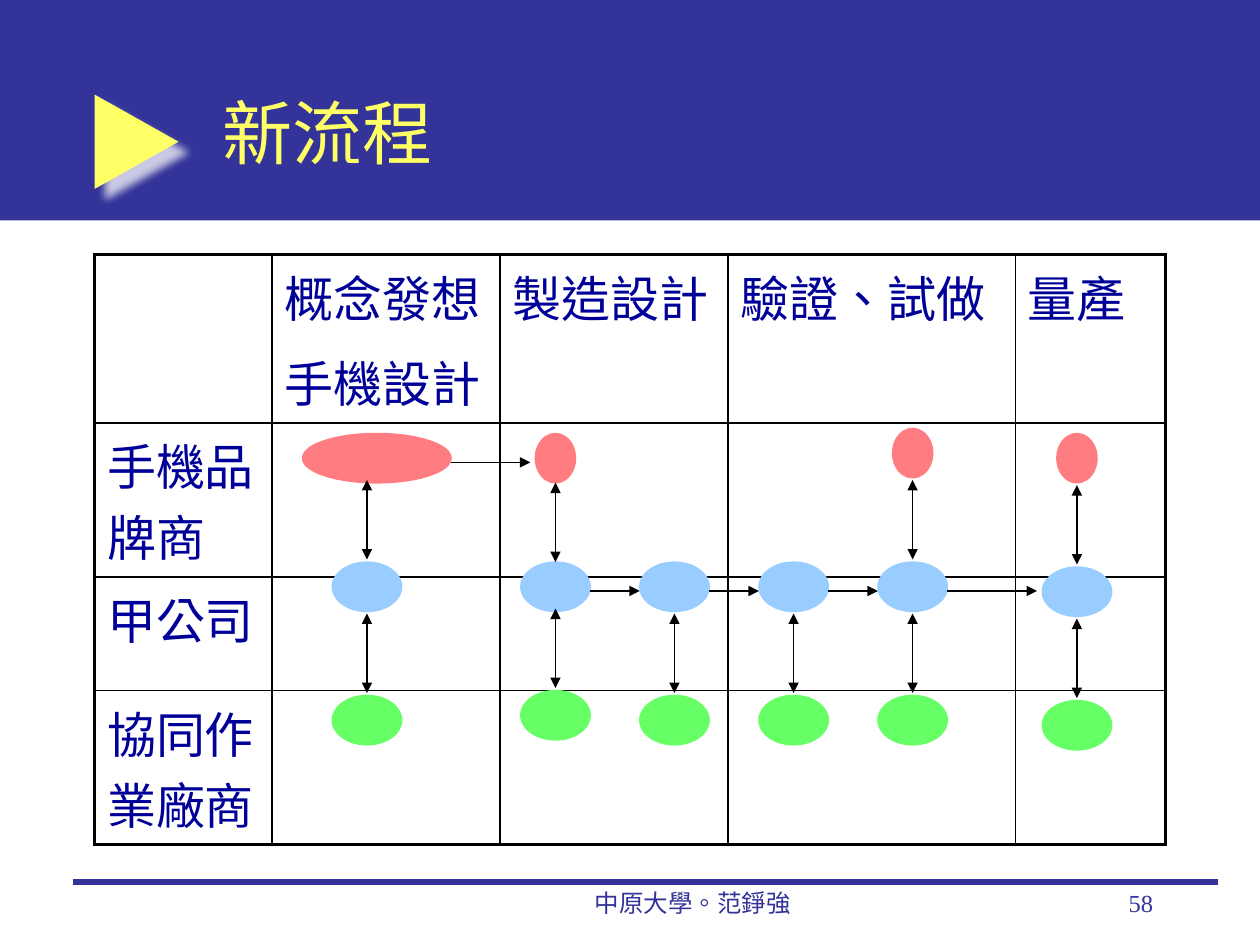
from lxml import etree
from pptx import Presentation
from pptx.dml.color import RGBColor
from pptx.enum.lang import MSO_LANGUAGE_ID
from pptx.enum.shapes import MSO_CONNECTOR, MSO_SHAPE
from pptx.enum.text import MSO_ANCHOR, PP_ALIGN
from pptx.oxml import parse_xml
from pptx.oxml.ns import qn
from pptx.util import Pt

RECT, OVAL, ARROW = MSO_SHAPE.RECTANGLE, MSO_SHAPE.OVAL, MSO_SHAPE.RIGHT_ARROW
STRAIGHT = MSO_CONNECTOR.STRAIGHT
LEFT, CENTER, RIGHT = PP_ALIGN.LEFT, PP_ALIGN.CENTER, PP_ALIGN.RIGHT
MIDDLE = MSO_ANCHOR.MIDDLE
CHINESE = MSO_LANGUAGE_ID.TRADITIONAL_CHINESE
NS = "http://schemas.openxmlformats.org/drawingml/2006/main"

COLORS = {
    "navy": "333399", "yellow": "FFFF66", "text": "000099", "black": "000000",
    "brand": "FF7C80", "company": "99CCFF", "partner": "66FF66",
}
ROWS = [
    ["", "概念發想\n手機設計", "製造設計", "驗證、試做", "量產"],
    ["手機品牌商", "", "", "", ""],
    ["甲公司", "", "", "", ""],
    ["協同作業廠商", "", "", "", ""],
]
COL_WIDTHS = [101.5, 130.3, 130.3, 164.2, 85.7]
ROW_HEIGHTS = [96.3, 88, 64.8, 88]
NODE_W, NODE_H, SMALL_W, WIDE_W = 39.7, 28.3, 23, 85
LINK_LEN, FLOW_Y = 45.4, 337.7
# STAGES: centre x, company top, partner top, brand top, brand link top, partner link top
STAGES = [
    (209.7, 321.2, 397.4, None, 274.3, 350.6),
    (317.4, 321.2, 394.6, 247.7, 275.8, 347.8),
    (385.4, 321.2, 397.4, None, None, 350.6),
    (453.5, 321.2, 397.4, None, None, 350.6),
    (521.5, 321.2, 397.4, 244.8, 274.3, 350.6),
    (615.4, 324.0, 400.3, 247.7, 277.2, 353.5),
]


def rgb(name):
    """Return the named colour."""
    return RGBColor.from_string(COLORS[name])


def style(p, size, color, font, align=LEFT):
    """Format a whole paragraph."""
    p.alignment = align
    p.font.size, p.font.name = Pt(size), font
    p.font.color.rgb = rgb(color)
    for r in p.runs:
        r.font.language_id = CHINESE


def add_shape(s, kind, x, y, w, h, color, outlined=False):
    """Add a filled preset shape."""
    sp = s.shapes.add_shape(kind, Pt(x), Pt(y), Pt(w), Pt(h))
    sp.shadow.inherit = False
    sp.fill.solid()
    sp.fill.fore_color.rgb = rgb(color)
    if outlined:
        sp.line.color.rgb = rgb(color)
        sp.line.width = Pt(0.75)
    else:
        sp.line.fill.background()
    return sp


def add_node(s, cx, top, color, width=NODE_W):
    """Add an ellipse centred on cx."""
    add_shape(s, OVAL, cx - width / 2, top, width, NODE_H, color, True)


def add_line(s, x1, y1, x2, y2, color="black", width=0.75, ends=()):
    """Add a straight line with optional arrowheads."""
    cn = s.shapes.add_connector(STRAIGHT, Pt(x1), Pt(y1), Pt(x2), Pt(y2))
    cn.line.color.rgb = rgb(color)
    cn.line.width = Pt(width)
    ln = cn.line._get_or_add_ln()
    for end in ends:
        etree.SubElement(ln, qn(f"a:{end}"), type="triangle")
    etree.SubElement(cn._element.spPr, qn("a:effectLst"))


def add_label(s, text, x, w, align):
    """Add a footer text."""
    sp = s.shapes.add_textbox(Pt(x), Pt(504), Pt(w), Pt(36))
    tf = sp.text_frame
    tf.word_wrap = True
    tf.text = text
    style(tf.paragraphs[0], 14, "navy", "Times New Roman", align)


def add_header(s):
    """Add the title band, its marker and the title."""
    add_shape(s, RECT, 0, 0, 720, 126, "navy")
    marker = add_shape(s, ARROW, 54, 54, 48, 54, "yellow")
    marker.adjustments[0], marker.adjustments[1] = 0.38, 1
    spPr = marker._element.spPr
    spPr.remove(spPr.find(qn("a:effectLst")))
    spPr.append(parse_xml(
        f'<a:effectLst xmlns:a="{NS}"><a:outerShdw blurRad="{Pt(5)}" dist="{Pt(8.5)}" '
        'dir="2700000" algn="ctr" rotWithShape="0"><a:srgbClr val="FFFFFF">'
        '<a:alpha val="75000"/></a:srgbClr></a:outerShdw></a:effectLst>'))
    title = s.shapes.title
    title.left, title.top, title.width, title.height = Pt(120), Pt(30), Pt(546), Pt(90)
    title.element.getparent().append(title.element)
    tf = title.text_frame
    tf.text = "新流程"
    tf.vertical_anchor = MIDDLE
    style(tf.paragraphs[0], 40, "yellow", "Arial")


def set_borders(cell, widths):
    """Draw the left, right, top and bottom borders of a cell."""
    tcPr = cell._tc.get_or_add_tcPr()
    for side, width in zip("LRTB", widths):
        tcPr.append(parse_xml(
            f'<a:ln{side} xmlns:a="{NS}" w="{Pt(width)}"><a:solidFill>'
            f'<a:srgbClr val="{COLORS["black"]}"/></a:solidFill></a:ln{side}>'))


def add_table(s):
    """Add the grid of stages and parties."""
    last_r, last_c = len(ROWS) - 1, len(COL_WIDTHS) - 1
    frame = s.shapes.add_table(last_r + 1, last_c + 1, Pt(54), Pt(145.4),
                               Pt(sum(COL_WIDTHS)), Pt(sum(ROW_HEIGHTS)))
    table = frame.table
    table.first_row = table.horz_banding = False
    for col, width in zip(table.columns, COL_WIDTHS):
        col.width = Pt(width)
    for r, height in enumerate(ROW_HEIGHTS):
        table.rows[r].height = Pt(height)
        for c, text in enumerate(ROWS[r]):
            cell = table.cell(r, c)
            edges = (c == 0, c == last_c, r == 0, r == last_r)
            set_borders(cell, [2.25 if edge else 1 for edge in edges])
            cell.fill.background()
            cell.text = text
            for i, p in enumerate(cell.text_frame.paragraphs):
                style(p, 28, "text", "Times New Roman")
                if i:
                    p.space_before = Pt(8.4)


def add_process(s):
    """Add the nodes of each stage and the links between them."""
    both = ("headEnd", "tailEnd")
    add_node(s, 215.3, 247.7, "brand", WIDE_W)
    for cx, company, partner, brand, upper, lower in STAGES:
        if brand:
            add_node(s, cx, brand, "brand", SMALL_W)
        add_node(s, cx, company, "company")
        add_node(s, cx, partner, "partner")
        for top in filter(None, (upper, lower)):
            add_line(s, cx, top, cx, top + LINK_LEN, ends=both)
    add_line(s, 257.8, 264.2, 303.1, 264.2, ends=("tailEnd",))
    centers = [stage[0] for stage in STAGES[1:]]
    for a, b in zip(centers, centers[1:]):
        gap = 3 if b == centers[-1] else 0
        add_line(s, a + NODE_W / 2, FLOW_Y, b - NODE_W / 2 - gap, FLOW_Y, ends=("tailEnd",))


def main():
    """Build and save the slide."""
    prs = Presentation()
    prs.slide_width, prs.slide_height = Pt(720), Pt(540)
    s = prs.slides.add_slide(prs.slide_layouts[5])
    add_header(s)
    add_line(s, 42, 504, 696, 504, "navy", 3)
    add_label(s, "中原大學。范錚強", 282, 228, CENTER)
    add_label(s, "58", 516, 150, RIGHT)
    add_table(s)
    add_process(s)
    prs.save("out.pptx")


if __name__ == "__main__":
    main()
